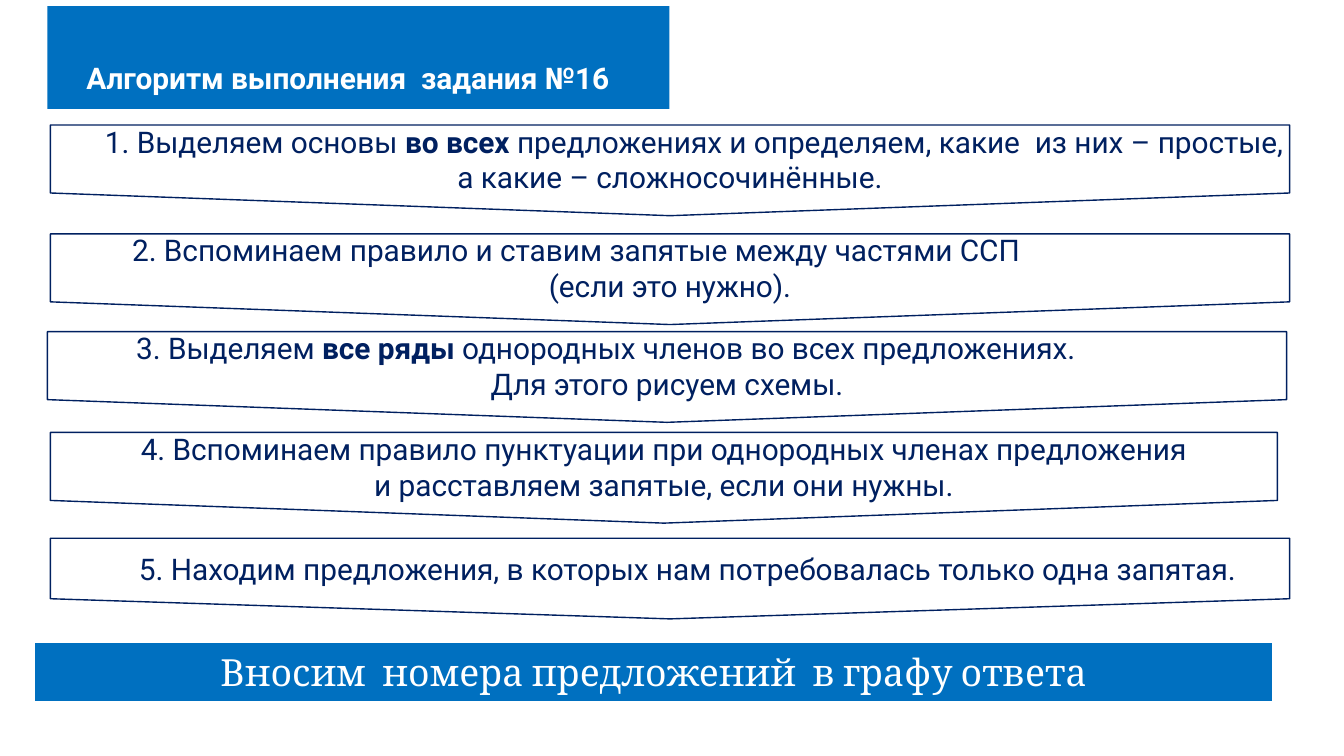
from pptx import Presentation
from pptx.dml.color import RGBColor as Rgb
from pptx.enum.shapes import MSO_SHAPE as Kind
from pptx.enum.text import MSO_ANCHOR as Anchor, MSO_AUTO_SIZE as Fit, PP_ALIGN as Align
from pptx.util import Inches, Pt

BLUE = Rgb(0x00, 0x70, 0xC0)
NAVY = Rgb(0x00, 0x20, 0x60)
WHITE = Rgb(0xFF, 0xFF, 0xFF)

# Each step: left, top, width, height, then lines of (text, first-line indent, alignment);
# asterisks enclose bold words
STEPS = [
    (0.5, 1.24, 12.29, 0.9, [
        ("1. Выделяем основы *во всех* предложениях и определяем, какие  из них – простые, "
         "а какие – сложносочинённые.", 0.48, Align.CENTER)]),
    (0.5, 2.32, 12.29, 0.9, [
        ("2. Вспоминаем правило и ставим запятые между частями ССП", 0.81, Align.LEFT),
        ("(если это нужно).", 0, Align.CENTER)]),
    (0.47, 3.29, 12.29, 0.9, [
        ("3. Выделяем *все ряды* однородных членов во всех предложениях.", 0.88, Align.LEFT),
        ("Для этого рисуем схемы.", 0, Align.CENTER)]),
    (0.5, 4.29, 12.17, 0.9, [
        ("4. Вспоминаем правило пунктуации при однородных членах предложения", 0, Align.CENTER),
        ("и расставляем запятые, если они нужны.", 0, Align.CENTER)]),
    (0.5, 5.34, 12.29, 0.8, [
        ("5. Находим предложения, в которых нам потребовалась только одна запятая.",
         0.35, Align.CENTER)]),
]


def write(para, text, font="Roboto", size=21.3, color=NAVY, bold=False,
          align=Align.CENTER, indent=0):
    props = para._p.get_or_add_pPr()
    props.set("marL", "0")
    props.set("indent", str(Inches(indent)))
    para.alignment = align
    para.line_spacing = 1.0
    para.space_before = Pt(0)
    for i, part in enumerate(text.split("*")):
        run = para.add_run()
        run.text = part
        run.font.name = font
        run.font.size = Pt(size)
        run.font.color.rgb = color
        run.font.bold = bold or i % 2 == 1


def set_frame(shape, left=0, top=0, right=0, bottom=0):
    frame = shape.text_frame
    frame.word_wrap = True
    frame.auto_size = Fit.NONE
    frame.vertical_anchor = Anchor.MIDDLE
    frame.margin_left, frame.margin_top = Inches(left), Inches(top)
    frame.margin_right, frame.margin_bottom = Inches(right), Inches(bottom)
    return frame


def add_box(slide, kind, area, fill, line, weight):
    box = slide.shapes.add_shape(kind, *map(Inches, area))
    box.shadow.inherit = False
    box.fill.solid()
    box.fill.fore_color.rgb = fill
    box.line.color.rgb = line
    box.line.width = Pt(weight)
    return box


def add_title(slide, text):
    title = slide.shapes.title
    title.left, title.top = Inches(0.47), Inches(0.06)
    title.width, title.height = Inches(6.17), Inches(1.02)
    title.fill.solid()
    title.fill.fore_color.rgb = BLUE
    frame = set_frame(title, 0.13, 0.52, 0.34, 0.13)
    write(frame.paragraphs[0], text, color=WHITE, bold=True)


def add_step(slide, area, lines):
    arrow = add_box(slide, Kind.DOWN_ARROW, area, WHITE, NAVY, 1)
    arrow.adjustments[0] = 1
    arrow.adjustments[1] = 0.25
    frame = set_frame(arrow)
    for i, (text, indent, align) in enumerate(lines):
        para = frame.add_paragraph() if i else frame.paragraphs[0]
        write(para, text, indent=indent, align=align)


def add_result(slide, text):
    bar = add_box(slide, Kind.RECTANGLE, (0.34, 6.37, 12.29, 0.59), BLUE, WHITE, 1.5)
    write(set_frame(bar).paragraphs[0], text, font="Cambria", size=26.7, color=WHITE)


def main():
    deck = Presentation()
    deck.slide_width, deck.slide_height = Inches(13.33), Inches(7.5)
    slide = deck.slides.add_slide(deck.slide_layouts[5])

    # Heading
    add_title(slide, "Алгоритм выполнения  задания №16")

    # Steps of the algorithm
    for *area, lines in STEPS:
        add_step(slide, area, lines)

    # Final action
    add_result(slide, "Вносим  номера предложений  в графу ответа")

    deck.save("out.pptx")


if __name__ == "__main__":
    main()
